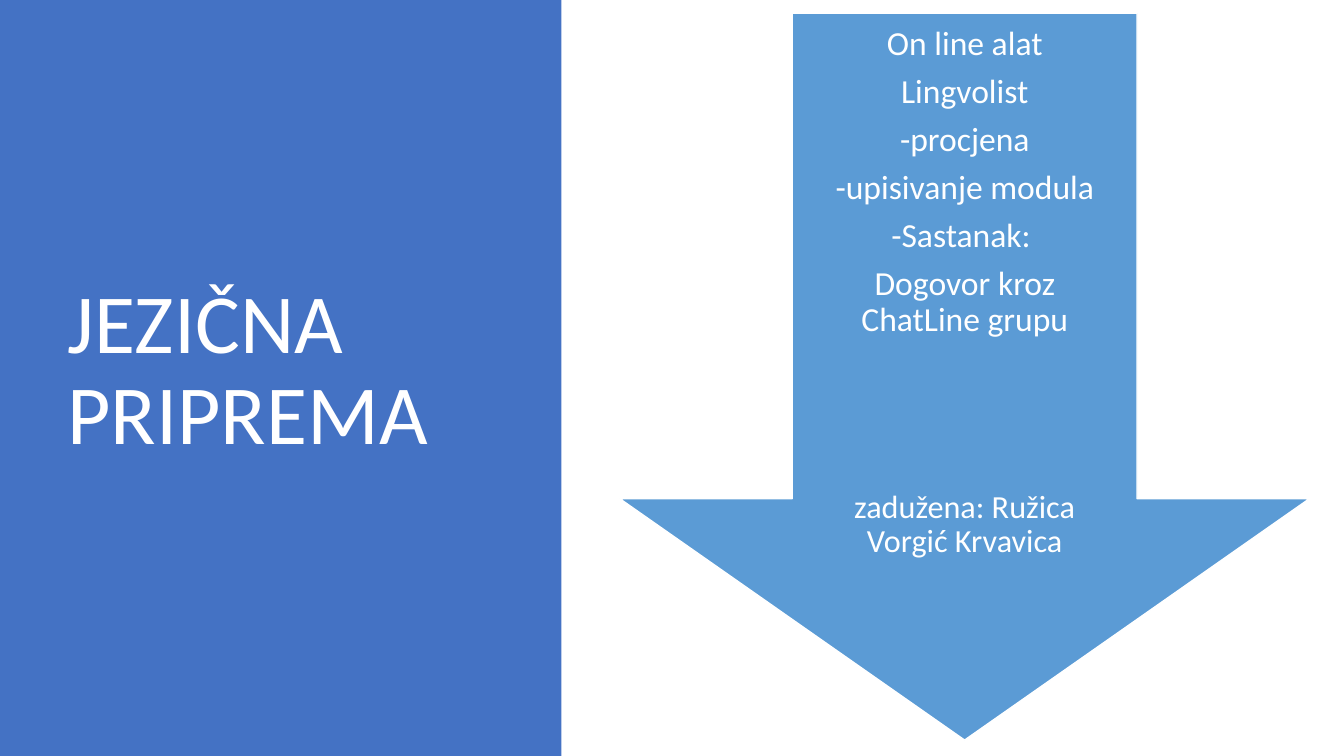
from dataclasses import dataclass

from pptx import Presentation
from pptx.dml.color import RGBColor
from pptx.enum.shapes import MSO_SHAPE
from pptx.enum.text import MSO_ANCHOR, MSO_AUTO_SIZE, PP_ALIGN
from pptx.util import Cm, Pt

RECTANGLE, DOWN_ARROW = MSO_SHAPE.RECTANGLE, MSO_SHAPE.DOWN_ARROW
TOP, MIDDLE = MSO_ANCHOR.TOP, MSO_ANCHOR.MIDDLE
LEFT, CENTER = PP_ALIGN.LEFT, PP_ALIGN.CENTER
NO_FIT = MSO_AUTO_SIZE.NONE

COLORS = {"panel": "4472C4", "arrow": "5B9BD5", "white": "FFFFFF"}
FONT = "Calibri"
TITLE_ONLY = 5


@dataclass
class Box:
    left: float
    top: float
    width: float
    height: float

    def lengths(self) -> tuple:
        return Cm(self.left), Cm(self.top), Cm(self.width), Cm(self.height)


@dataclass
class Line:
    text: str
    size: float = 24
    after: float = 8.4


PANEL = Box(0, 0, 14.15, 19.05)
TITLE = Box(1.45, 1.73, 10.57, 15.29)
ARROW = Box(15.62, 0.33, 17.38, 18.32)
STEPS = Box(19.97, 0.33, 8.69, 15.29)

STEP_LINES = [
    Line("On line alat"),
    Line("Lingvolist"),
    Line("-procjena"),
    Line("-upisivanje modula"),
    Line("-Sastanak: "),
    Line("Dogovor kroz ChatLine grupu", after=108),
    Line("zadužena: Ružica Vorgić Krvavica", size=23),
]


def add_block(s, kind: int, box: Box, color: str, outline: str = ""):
    """Add a filled preset shape, with a thin outline if one is named."""
    sp = s.shapes.add_shape(kind, *box.lengths())
    sp.shadow.inherit = False
    sp.fill.solid()
    sp.fill.fore_color.rgb = RGBColor.from_string(COLORS[color])
    if outline:
        sp.line.color.rgb = RGBColor.from_string(COLORS[outline])
        sp.line.width = Pt(1)
    else:
        sp.line.fill.background()
    return sp


def write_line(p, text: str, *, size: float, align: int = LEFT,
               after: float = 0, color: str = "white") -> None:
    """Fill one paragraph with formatted text."""
    p.alignment = align
    p.line_spacing = 0.9
    p.space_before = Pt(0)
    p.space_after = Pt(after)
    r = p.add_run()
    r.text = text
    r.font.name = FONT
    r.font.size = Pt(size)
    r.font.color.rgb = RGBColor.from_string(COLORS[color])


def add_title(s) -> None:
    sp = s.shapes.title
    sp.left, sp.top, sp.width, sp.height = TITLE.lengths()
    tf = sp.text_frame
    tf.word_wrap = True
    tf.auto_size = NO_FIT
    tf.vertical_anchor = MIDDLE
    write_line(tf.paragraphs[0], "JEZIČNA PRIPREMA", size=60)


def add_steps(s) -> None:
    tf = s.shapes.add_textbox(*STEPS.lengths()).text_frame
    tf.word_wrap = True
    tf.auto_size = NO_FIT
    tf.vertical_anchor = TOP
    tf.margin_left = tf.margin_right = Cm(0.48)
    tf.margin_top = Cm(0.34)
    for i, line in enumerate(STEP_LINES):
        p = tf.add_paragraph() if i else tf.paragraphs[0]
        write_line(p, line.text, size=line.size, align=CENTER, after=line.after)


def main() -> None:
    prs = Presentation()
    prs.slide_width, prs.slide_height = Cm(33.87), Cm(19.05)
    s = prs.slides.add_slide(prs.slide_layouts[TITLE_ONLY])

    # Left panel, placed behind the title
    panel = add_block(s, RECTANGLE, PANEL, "panel")
    s.shapes.title.element.addprevious(panel.element)
    add_title(s)

    # Arrow with the steps of the preparation
    arrow = add_block(s, DOWN_ARROW, ARROW, "arrow", outline="white")
    arrow.adjustments[0] = 0.5
    arrow.adjustments[1] = 0.35
    add_steps(s)

    prs.save("out.pptx")


if __name__ == "__main__":
    main()
